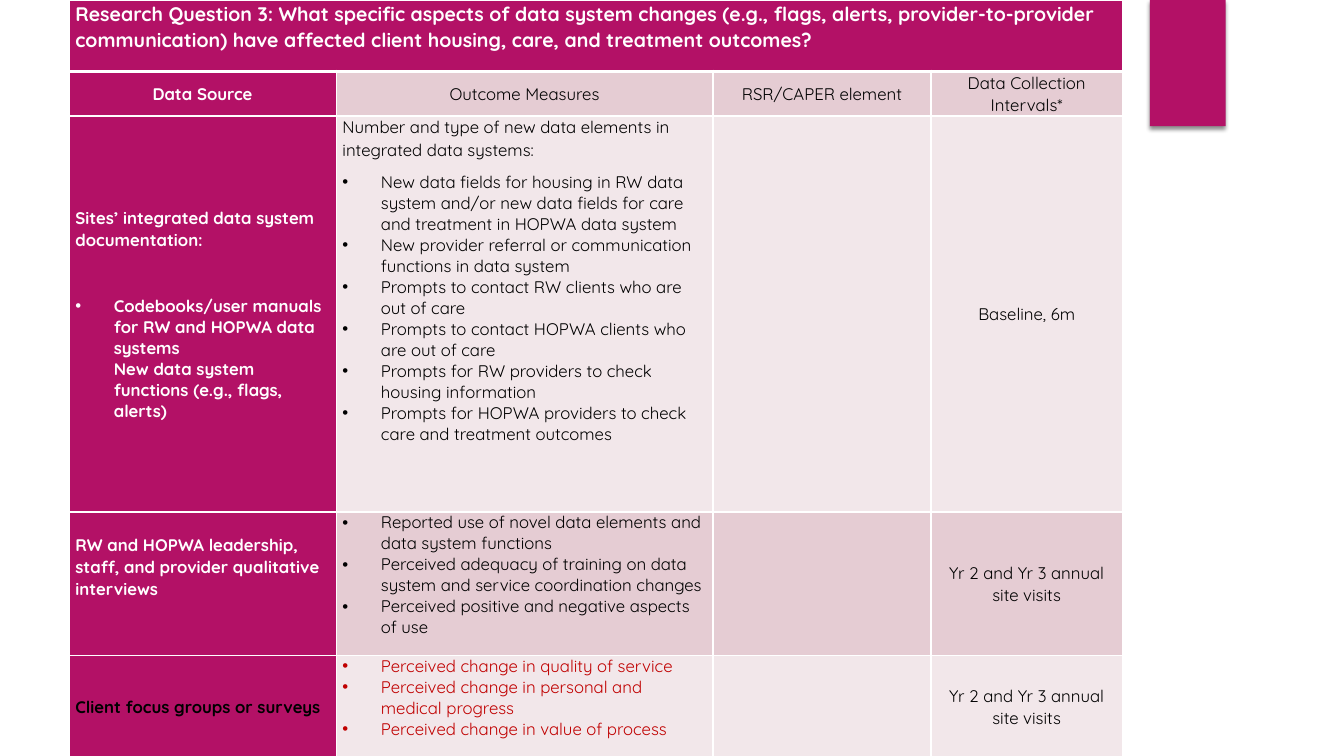
from copy import deepcopy

from lxml import etree
from pptx import Presentation
from pptx.dml.color import RGBColor
from pptx.enum import shapes, text
from pptx.oxml import ns
from pptx.util import Cm, Pt

MAGENTA = RGBColor(0xB3, 0x11, 0x66)
ROSE = RGBColor(0xE5, 0xCC, 0xD3)
PALE = RGBColor(0xF2, 0xE7, 0xEA)
WHITE = RGBColor(0xFF, 0xFF, 0xFF)
BLACK = RGBColor(0, 0, 0)
RED = RGBColor(0xC0, 0, 0)
FONT = "Quicksand"
INDENT = Cm(0.97)


def add_xml(parent, tag, **attributes):
    return etree.SubElement(parent, ns.qn(tag), {key: str(value) for key, value in attributes.items()})


def write(frame, words, first=False, size=12, color=BLACK, bold=False,
          align=text.PP_ALIGN.LEFT, bullet=False, before=0):
    para = frame.paragraphs[0] if first else frame.add_paragraph()
    para.text = words
    para.alignment = align
    if before:
        para.space_before = Pt(before)
    if bullet:
        props = para._p.get_or_add_pPr()
        props.set("marL", str(INDENT))
        props.set("indent", str(-INDENT))
        add_xml(props, "a:buFont", typeface="Arial")
        add_xml(props, "a:buChar", char="•")
    else:
        para.line_spacing = 1.06
        para.space_after = Pt(8)
    for span in para.runs:
        span.font.name = FONT
        span.font.size = Pt(size)
        span.font.bold = bold
        span.font.color.rgb = color
    for line_break in para._p.findall(ns.qn("a:br")):
        line_break.insert(0, deepcopy(para.runs[0].font._element))


deck = Presentation()
deck.slide_width = Cm(33.87)
deck.slide_height = Cm(19.05)
page = deck.slides.add_slide(deck.slide_layouts[6])

tab = page.shapes.add_shape(shapes.MSO_SHAPE.RECTANGLE, Cm(28.98), Cm(0), Cm(1.91), Cm(3.18))
tab.fill.solid()
tab.fill.fore_color.rgb = MAGENTA
tab.line.fill.background()
effects = add_xml(tab._element.spPr, "a:effectLst")
shadow = add_xml(effects, "a:outerShdw", blurRad=Pt(3), dist=Pt(2), dir=5400000, rotWithShape=0)
add_xml(add_xml(shadow, "a:srgbClr", val="000000"), "a:alpha", val=45000)

widths = [6.73, 9.5, 5.49, 4.83]
heights = [1.8, 1.09, 9.98, 3.61, 2.57]
table = page.shapes.add_table(5, 4, Cm(1.74), Cm(0), Cm(sum(widths)), Cm(sum(heights))).table
for column, width in zip(table.columns, widths):
    column.width = Cm(width)
for row, height in zip(table.rows, heights):
    row.height = Cm(height)

row_fills = [MAGENTA, ROSE, PALE, ROSE, PALE]
for r, row in enumerate(table.rows):
    for c, cell in enumerate(row.cells):
        cell.margin_left = cell.margin_right = Cm(0.16)
        cell.margin_top = cell.margin_bottom = 0
        top_aligned = r == 0 or (r > 1 and c == 1)
        cell.vertical_anchor = text.MSO_ANCHOR.TOP if top_aligned else text.MSO_ANCHOR.MIDDLE
        for side in "LRTB":
            thick = (r, side) in [(0, "B"), (1, "T")]
            border = add_xml(cell._tc.get_or_add_tcPr(), f"a:ln{side}", w=Pt(3 if thick else 1))
            add_xml(add_xml(border, "a:solidFill"), "a:srgbClr", val=WHITE)
        cell.fill.solid()
        cell.fill.fore_color.rgb = MAGENTA if c == 0 else row_fills[r]

table.cell(0, 0).merge(table.cell(0, 3))
write(table.cell(0, 0).text_frame,
      "Research Question 3: What specific aspects of data system changes (e.g., flags, alerts, "
      "provider-to-provider communication) have affected client housing, care, and treatment outcomes?",
      first=True, size=14, color=WHITE, bold=True)

headings = ["Data Source", "Outcome Measures", "RSR/CAPER element", "Data Collection Intervals*"]
for c, heading in enumerate(headings):
    write(table.cell(1, c).text_frame, heading, first=True, bold=c == 0,
          color=BLACK if c else WHITE, align=text.PP_ALIGN.CENTER)

sources = [
    ("Sites’ integrated data system documentation:", WHITE),
    ("RW and HOPWA leadership, staff, and provider qualitative interviews", WHITE),
    ("Client focus groups or surveys", BLACK),
]
for r, (source, color) in enumerate(sources, 2):
    write(table.cell(r, 0).text_frame, source, first=True, color=color, bold=True)
write(table.cell(2, 0).text_frame,
      "Codebooks/user manuals for RW and HOPWA data systems \vNew data system functions (e.g., flags, alerts)",
      color=WHITE, bold=True, bullet=True, before=24)
table.cell(3, 0).margin_bottom = Cm(0.85)

measures = [
    ["New data fields for housing in RW data system and/or new data fields for care and treatment in HOPWA data system",
     "New provider referral or communication functions in data system",
     "Prompts to contact RW clients who are out of care",
     "Prompts to contact HOPWA clients who are out of care",
     "Prompts for RW providers to check housing information",
     "Prompts for HOPWA providers to check care and treatment outcomes"],
    ["Reported use of novel data elements and data system functions",
     "Perceived adequacy of training on data system and service coordination changes",
     "Perceived positive and negative aspects of use"],
    ["Perceived change in quality of service",
     "Perceived change in personal and medical progress",
     "Perceived change in value of process"],
]
write(table.cell(2, 1).text_frame,
      "Number and type of new data elements in integrated data systems:", first=True)
for r, items in enumerate(measures, 2):
    for i, item in enumerate(items):
        write(table.cell(r, 1).text_frame, item, first=r > 2 and i == 0,
              color=RED if r == 4 else BLACK, bullet=True)

intervals = ["Baseline, 6m", "Yr 2 and Yr 3 annual site visits", "Yr 2 and Yr 3 annual site visits"]
for r, interval in enumerate(intervals, 2):
    write(table.cell(r, 3).text_frame, interval, first=True, align=text.PP_ALIGN.CENTER)

deck.save("out.pptx")
